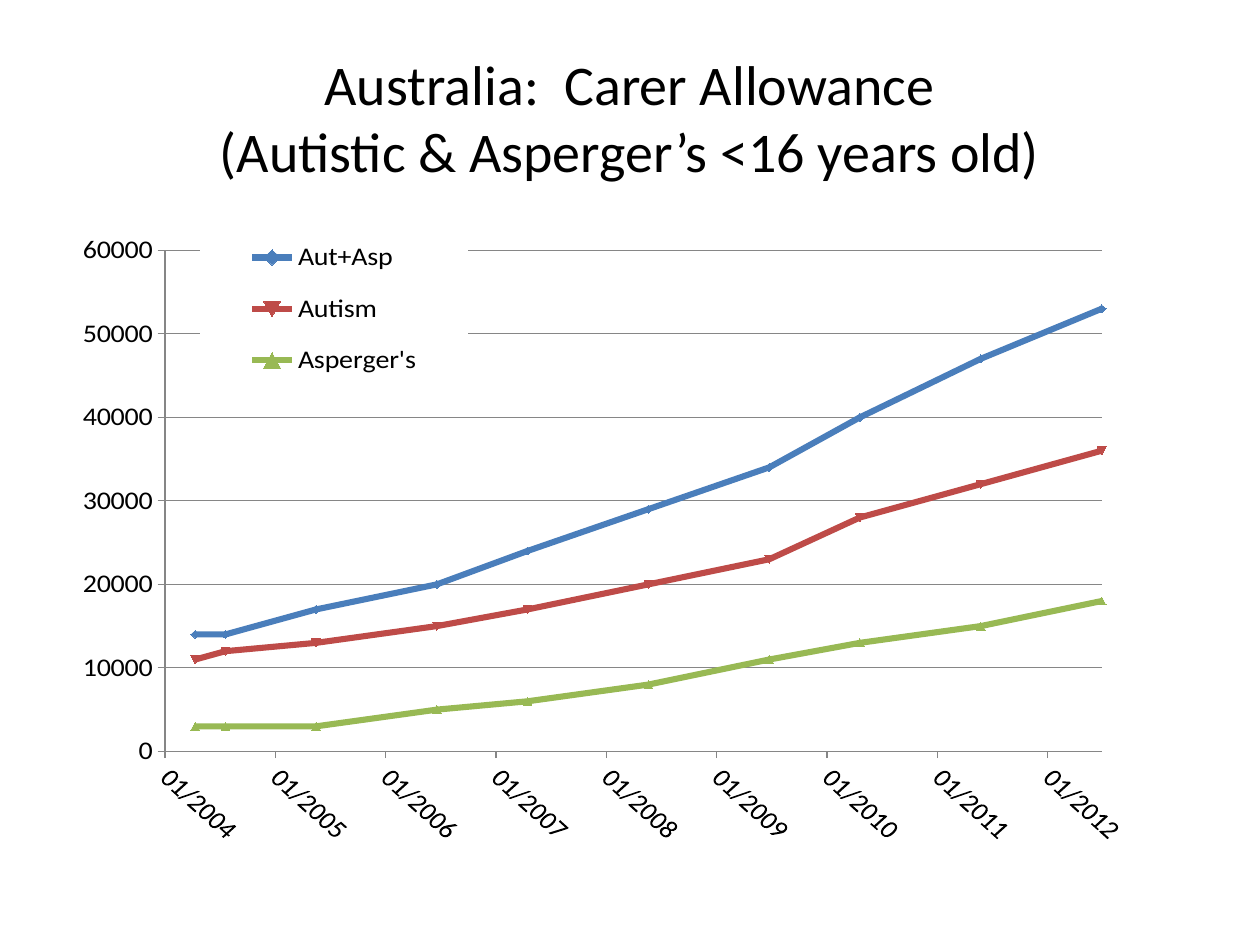
from lxml.etree import SubElement
from pptx import Presentation
from pptx.chart.data import XyChartData
from pptx.dml.color import RGBColor
from pptx.enum.chart import XL_CHART_TYPE, XL_LEGEND_POSITION, XL_MARKER_STYLE, XL_TICK_MARK
from pptx.enum.text import MSO_ANCHOR, PP_ALIGN
from pptx.oxml import parse_xml
from pptx.oxml.ns import nsdecls, qn
from pptx.util import Pt

PX = 914400 // 126
COLORS = {
    "text": "000000",
    "grid": "868686",
    "paper": "FFFFFF",
    "combined": "4A7EBB",
    "autism": "BE4B48",
    "asperger": "98B954",
}
DAYS = [38100, 38200, 38500, 38900, 39200, 39600, 40000, 40300, 40700, 41100]
SERIES = [
    ("Aut+Asp", "combined", XL_MARKER_STYLE.DIAMOND,
     [14000, 14000, 17000, 20000, 24000, 29000, 34000, 40000, 47000, 53000]),
    ("Autism", "autism", None,
     [11000, 12000, 13000, 15000, 17000, 20000, 23000, 28000, 32000, 36000]),
    ("Asperger's", "asperger", XL_MARKER_STYLE.TRIANGLE,
     [3000, 3000, 3000, 5000, 6000, 8000, 11000, 13000, 15000, 18000]),
]


def color(name):
    return RGBColor.from_string(COLORS[name])


def manual_layout(x, y, width, height, inner=False):
    target = '<c:layoutTarget val="inner"/>' if inner else ""
    return parse_xml(
        f'<c:layout {nsdecls("c")}><c:manualLayout>{target}'
        '<c:xMode val="edge"/><c:yMode val="edge"/>'
        f'<c:x val="{x}"/><c:y val="{y}"/><c:w val="{width}"/><c:h val="{height}"/>'
        '</c:manualLayout></c:layout>')


class SlideBuilder:
    def __init__(self, page, font="Calibri"):
        self.page = page
        self.font = font

    def style_font(self, font, size):
        font.name = self.font
        font.size = Pt(size)
        font.color.rgb = color("text")

    def title(self, text, left, top, width, height):
        box = self.page.shapes.add_textbox(left * PX, top * PX, width * PX, height * PX)
        frame = box.text_frame
        frame.word_wrap = True
        frame.vertical_anchor = MSO_ANCHOR.MIDDLE
        para = frame.paragraphs[0]
        para.text = text
        para.alignment = PP_ALIGN.CENTER
        self.style_font(para.font, 32)

    def scatter(self, left, top, width, height):
        data = XyChartData()
        for name, _, _, values in SERIES:
            series = data.add_series(name)
            for day, value in zip(DAYS, values):
                series.add_data_point(day, value)
        chart = self.page.shapes.add_chart(
            XL_CHART_TYPE.XY_SCATTER_LINES,
            left * PX, top * PX, width * PX, height * PX, data).chart
        chart.has_title = False
        self.style_font(chart.font, 10)
        chart.plots[0].vary_by_categories = False
        for series, (_, shade, marker, _) in zip(chart.plots[0].series, SERIES):
            self.series(series, color(shade), marker)
        self.axes(chart)
        self.legend(chart)
        plot_area = chart._chartSpace.chart.plotArea
        for layout in plot_area.findall(qn("c:layout")):
            plot_area.remove(layout)
        plot_area.insert(0, manual_layout(0.09, 0.052, 0.826, 0.888, inner=True))

    def series(self, series, shade, marker):
        series.smooth = False
        series.format.line.color.rgb = shade
        series.format.line.width = Pt(3.5)
        series.marker.size = 5
        if marker is not None:
            series.marker.style = marker
        series.marker.format.fill.solid()
        series.marker.format.fill.fore_color.rgb = shade
        series.marker.format.line.color.rgb = shade

    def axes(self, chart):
        dates, counts = chart.category_axis, chart.value_axis
        for axis in (dates, counts):
            axis.major_tick_mark = XL_TICK_MARK.OUTSIDE
            axis.minor_tick_mark = XL_TICK_MARK.NONE
            axis.format.line.color.rgb = color("grid")
            self.style_font(axis.tick_labels.font, 16)
        dates.has_major_gridlines = False
        dates.minimum_scale, dates.maximum_scale = 38000, 41100
        dates.major_unit = 365.25
        dates.tick_labels.number_format = "mm/yyyy"
        dates.tick_labels.number_format_is_linked = False
        dates._element.txPr.bodyPr.set("rot", "2700000")
        counts.minimum_scale, counts.maximum_scale = 0, 60000
        counts.major_unit = 10000
        counts.tick_labels.number_format = "0"
        counts.tick_labels.number_format_is_linked = False
        counts.has_major_gridlines = True
        counts.major_gridlines.format.line.color.rgb = color("grid")

    def legend(self, chart):
        chart.has_legend = True
        legend = chart.legend
        legend.position = XL_LEGEND_POSITION.RIGHT
        legend.include_in_layout = False
        self.style_font(legend.font, 16)
        element = legend._element
        for layout in element.findall(qn("c:layout")):
            element.remove(layout)
        element.find(qn("c:legendPos")).addnext(manual_layout(0.121, 0.001, 0.236, 0.31))
        properties = parse_xml(f'<c:spPr {nsdecls("c", "a")}/>')
        fill = SubElement(properties, qn("a:solidFill"))
        SubElement(fill, qn("a:srgbClr"), val=COLORS["paper"])
        element.find(qn("c:txPr")).addprevious(properties)


def main():
    deck = Presentation()
    deck.slide_width, deck.slide_height = 1260 * PX, 945 * PX
    builder = SlideBuilder(deck.slides.add_slide(deck.slide_layouts[6]))
    builder.title("Australia:  Carer Allowance\v(Autistic & Asperger’s <16 years old)",
                  63, 38, 1134, 157)
    builder.scatter(63, 221, 1134, 624)
    deck.save("out.pptx")


if __name__ == "__main__":
    main()
